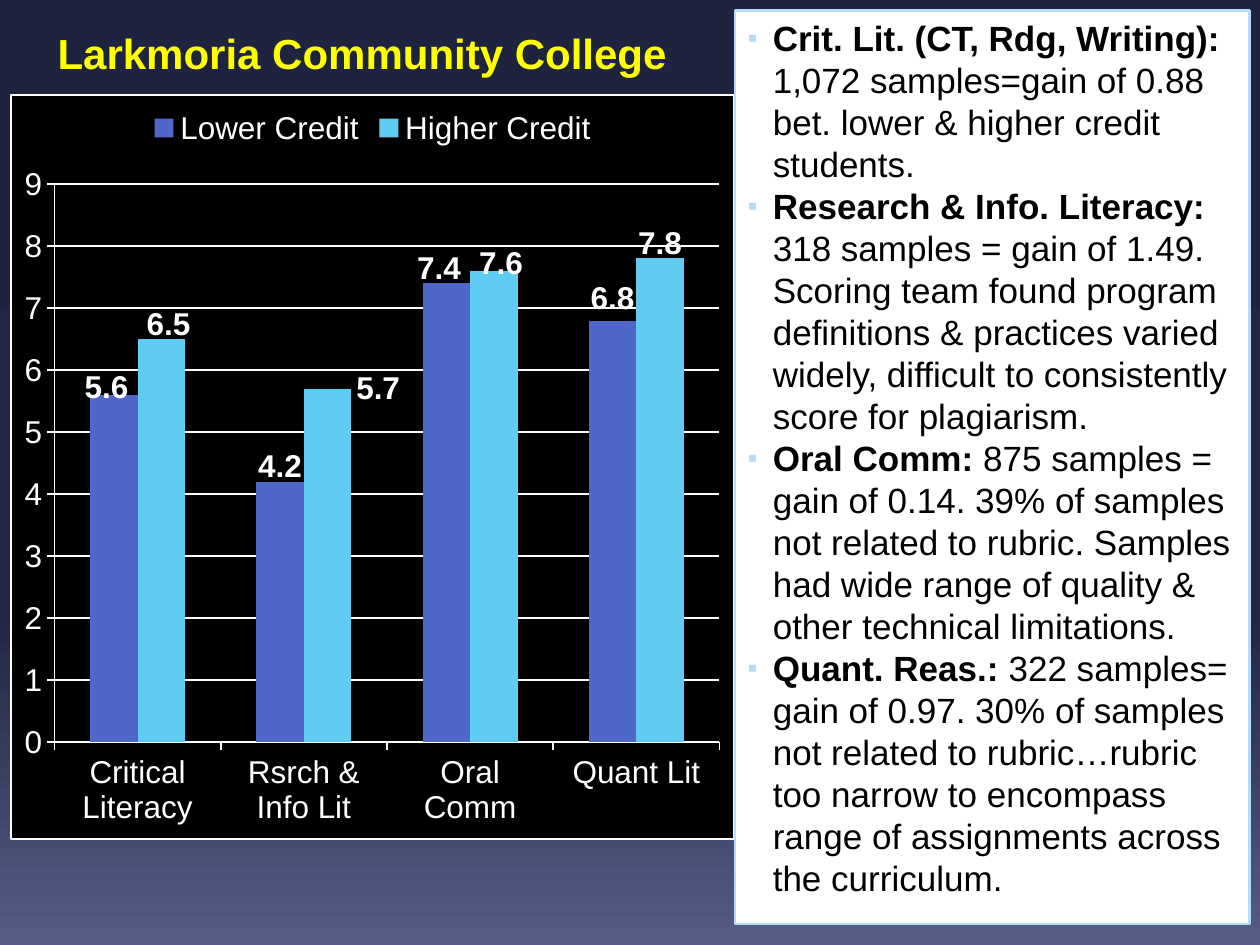
"""Build the college assessment slide with a credit-level chart and findings."""
from copy import deepcopy
from dataclasses import dataclass

from pptx import Presentation, oxml
from pptx import util as u
from pptx.chart import data
from pptx.dml.color import RGBColor
from pptx.enum import chart as charts
from pptx.enum import shapes, text
from pptx.oxml import ns


@dataclass(frozen=True)
class Theme:
    font: str = "Arial"
    title_size: int = 24
    body_size: int = 20
    body_leading: int = 24
    chart_size: int = 18
    title: str = "FFFF00"
    ink: str = "000000"
    paper: str = "FFFFFF"
    accent: str = "B4DCFA"
    series: tuple = ("4E67C8", "5ECCF3")
    backdrop: tuple = ((0, "1E233F"), (0.65, "202643"), (1, "575C86"))


CATEGORIES = ["Critical Literacy", "Rsrch & Info Lit", "Oral Comm", "Quant Lit"]
SERIES = {
    "Lower Credit": [5.6, 4.2, 7.4, 6.8],
    "Higher Credit": [6.5, 5.7, 7.6, 7.8],
}
LABEL_SHIFTS = [
    [(-0.01, 0.02), (0, 0.01), (-0.01, 0.01), None],
    [(0.01, 0.01), (0.07, 0.03), (0.01, 0.02), (0, 0.01)],
]
FINDINGS = [
    ("Crit. Lit. (CT, Rdg, Writing): ",
     "1,072 samples=gain of 0.88 bet. lower & higher credit students."),
    ("Research & Info. Literacy: ",
     "318 samples = gain of 1.49. Scoring team found program definitions & "
     "practices varied widely, difficult to consistently score for plagiarism."),
    ("Oral Comm: ",
     "875 samples = gain of 0.14. 39% of samples not related to rubric. "
     "Samples had wide range of quality & other technical limitations."),
    ("Quant. Reas.: ",
     "322 samples= gain of 0.97. 30% of samples not related to rubric…rubric "
     "too narrow to encompass range of assignments across the curriculum."),
]


def color(value):
    return RGBColor.from_string(value)


def manual_layout(**settings):
    items = "".join(f'<c:{key} val="{value}"/>' for key, value in settings.items())
    return oxml.parse_xml(
        f'<c:layout {ns.nsdecls("c")}><c:manualLayout>{items}'
        "</c:manualLayout></c:layout>")


class SlideBuilder:
    def __init__(self, page, theme):
        self.page = page
        self.theme = theme

    def style_font(self, font, size, value, bold=None):
        font.name = self.theme.font
        font.size = u.Pt(size)
        font.color.rgb = color(value)
        font.bold = bold

    def add_background(self):
        fill = self.page.background.fill
        fill.gradient()
        fill.gradient_angle = 270
        stops = self.page.element.find(".//" + ns.qn("a:gsLst"))
        stops.append(deepcopy(stops[-1]))
        for stop, (position, value) in zip(fill.gradient_stops, self.theme.backdrop):
            stop.position = position
            stop.color.rgb = color(value)

    def add_title(self, wording, *bounds):
        box = self.page.shapes.add_textbox(*map(u.Cm, bounds))
        frame = box.text_frame
        frame.word_wrap = True
        frame.vertical_anchor = text.MSO_ANCHOR.BOTTOM
        para = frame.paragraphs[0]
        para.text = wording
        para.alignment = text.PP_ALIGN.CENTER
        self.style_font(para.font, self.theme.title_size, self.theme.title, True)

    def add_column_chart(self, *bounds):
        theme = self.theme
        source = data.CategoryChartData()
        source.categories = CATEGORIES
        for name, values in SERIES.items():
            source.add_series(name, values)
        chart = self.page.shapes.add_chart(
            charts.XL_CHART_TYPE.COLUMN_CLUSTERED, *map(u.Cm, bounds), source).chart
        self.style_font(chart.font, theme.chart_size, theme.paper)
        chart.has_title = False
        chart.has_legend = True
        chart.legend.position = charts.XL_LEGEND_POSITION.TOP
        chart.legend.include_in_layout = False
        self.style_chart_area(chart)
        self.style_axes(chart)
        plot = chart.plots[0]
        plot.gap_width = 150
        plot.overlap = 0
        plot.vary_by_categories = False
        nodes = chart.element.findall(".//" + ns.qn("c:ser"))
        for series, node, value, shifts in zip(
                plot.series, nodes, theme.series, LABEL_SHIFTS):
            series.format.fill.solid()
            series.format.fill.fore_color.rgb = color(value)
            self.add_labels(series, node, shifts)

    def style_chart_area(self, chart):
        theme = self.theme
        chart.element.find(ns.qn("c:chart")).addnext(oxml.parse_xml(
            f'<c:spPr {ns.nsdecls("c", "a")}>'
            f'<a:solidFill><a:srgbClr val="{theme.ink}"/></a:solidFill>'
            f'<a:ln w="{u.Pt(0.75)}"><a:solidFill><a:srgbClr val="{theme.paper}"/>'
            "</a:solidFill></a:ln></c:spPr>"))
        area = chart.element.find(".//" + ns.qn("c:plotArea"))
        for layout in area.findall(ns.qn("c:layout")):
            area.remove(layout)
        area.insert(0, manual_layout(
            layoutTarget="inner", xMode="edge", yMode="edge",
            x=0.06, y=0.12, w=0.92, h=0.75))

    def style_axes(self, chart):
        scale = chart.value_axis
        scale.minimum_scale, scale.maximum_scale, scale.major_unit = 0, 9, 1
        scale.has_major_gridlines = True
        for axis in (scale, chart.category_axis):
            axis.major_tick_mark = charts.XL_TICK_MARK.OUTSIDE
        for item in (scale, chart.category_axis, scale.major_gridlines):
            item.format.line.color.rgb = color(self.theme.paper)
            item.format.line.width = u.Pt(1)

    def add_labels(self, series, node, shifts):
        theme = self.theme
        labels = series.data_labels
        labels.show_value = True
        labels.position = charts.XL_LABEL_POSITION.OUTSIDE_END
        self.style_font(labels.font, theme.chart_size, theme.paper, True)
        moved = [(index, shift) for index, shift in enumerate(shifts) if shift]
        for index, _ in moved:
            label = series.points[index].data_label
            label.position = charts.XL_LABEL_POSITION.OUTSIDE_END
            self.style_font(label.font, theme.chart_size, theme.paper, True)
        for entry, (_, (x, y)) in zip(node.findall(".//" + ns.qn("c:dLbl")), moved):
            entry.find(ns.qn("c:idx")).addnext(manual_layout(x=x, y=y))

    def add_findings(self, *bounds):
        theme = self.theme
        box = self.page.shapes.add_shape(
            shapes.MSO_SHAPE.RECTANGLE, *map(u.Cm, bounds))
        box.shadow.inherit = False
        box.fill.solid()
        box.fill.fore_color.rgb = color(theme.paper)
        box.line.color.rgb = color(theme.accent)
        box.line.width = u.Pt(1.5)
        frame = box.text_frame
        frame.word_wrap = True
        frame.vertical_anchor = text.MSO_ANCHOR.TOP
        for index, finding in enumerate(FINDINGS):
            para = frame.add_paragraph() if index else frame.paragraphs[0]
            para.alignment = text.PP_ALIGN.LEFT
            para.line_spacing = u.Pt(theme.body_leading)
            self.style_font(para.font, theme.body_size, theme.ink)
            for wording, bold in zip(finding, (True, False)):
                span = para.add_run()
                span.text = wording
                span.font.bold = bold
            self.add_bullet(para)

    def add_bullet(self, para):
        indent = u.Cm(0.51)
        properties = para._p.get_or_add_pPr()
        properties.set("marL", str(indent))
        properties.set("indent", str(-indent))
        defaults = properties.find(ns.qn("a:defRPr"))
        for item in (
                f'buClr {ns.nsdecls("a")}><a:srgbClr val="{self.theme.accent}"/></a:buClr',
                f'buSzPct {ns.nsdecls("a")} val="80000"/',
                f'buFont {ns.nsdecls("a")} typeface="{self.theme.font}"/',
                f'buChar {ns.nsdecls("a")} char="▪"/'):
            defaults.addprevious(oxml.parse_xml(f"<a:{item}>"))


def main():
    deck = Presentation()
    deck.slide_width, deck.slide_height = u.Cm(25.4), u.Cm(19.05)
    builder = SlideBuilder(deck.slides.add_slide(deck.slide_layouts[6]), Theme())
    builder.add_background()
    builder.add_title("Larkmoria Community College", 0.21, 0.21, 14.18, 1.48)
    builder.add_column_chart(0.21, 1.9, 14.6, 15.03)
    builder.add_findings(14.82, 0.21, 10.37, 18.42)
    deck.save("out.pptx")


if __name__ == "__main__":
    main()
